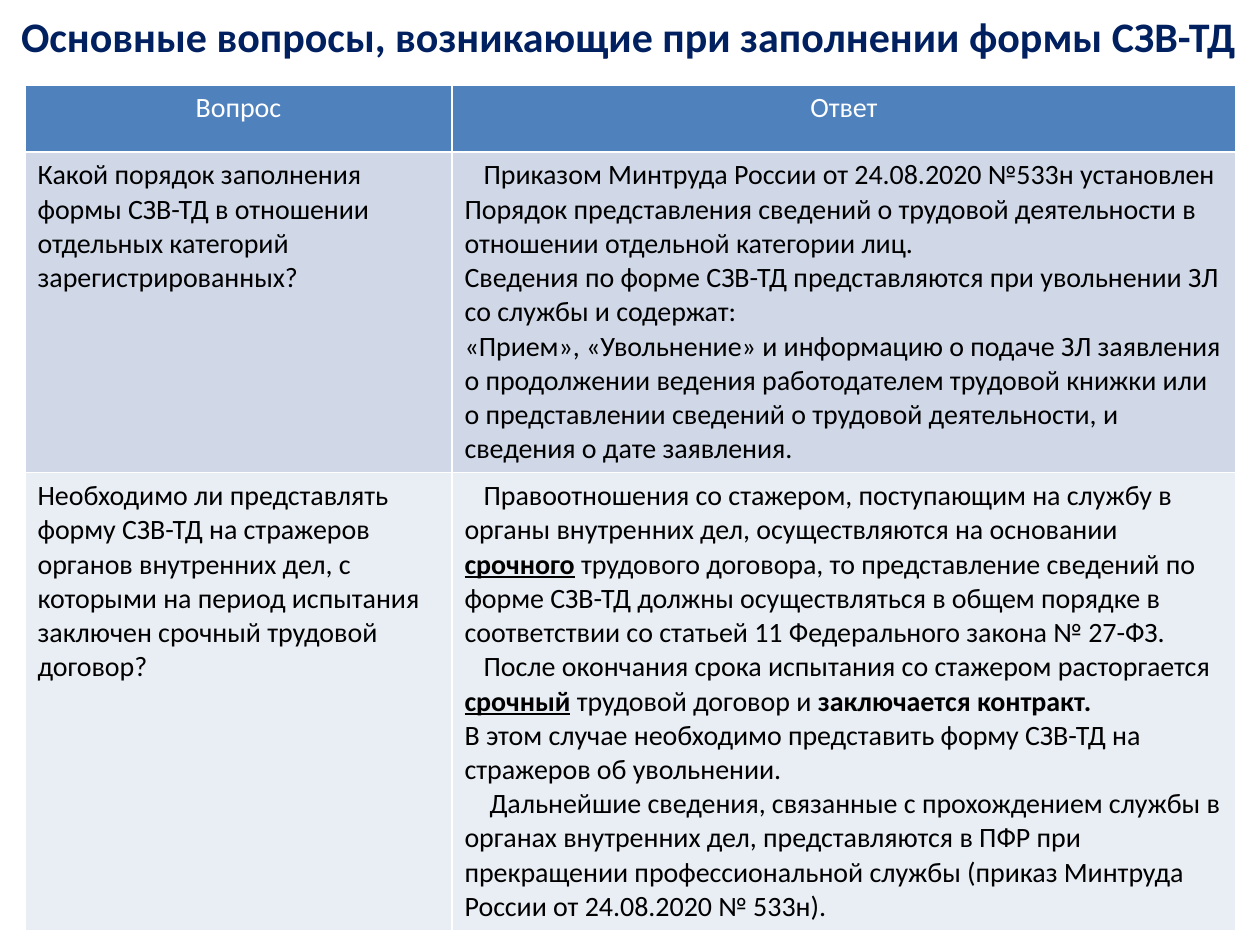
from pptx import Presentation
from pptx.dml.color import RGBColor
from pptx.enum.text import PP_ALIGN
from pptx.util import Emu, Pt

PX = 7257.14
NAVY = RGBColor(0x00, 0x20, 0x60)
BLUE = RGBColor(0x4F, 0x81, 0xBD)
PALE_BLUE = RGBColor(0xD0, 0xD8, 0xE8)
PALEST_BLUE = RGBColor(0xE9, 0xED, 0xF4)
WHITE = RGBColor(0xFF, 0xFF, 0xFF)
BLACK = RGBColor(0x00, 0x00, 0x00)

PLAIN, BOLD, KEY = (False, False), (True, False), (True, True)
INDENT, DEEP_INDENT = 19, 25

TITLE = "Основные вопросы, возникающие при заполнении формы СЗВ-ТД"
TITLE_BOX = (6, 6, 1245, 69)
TABLE_ORIGIN = (25, 85)
COLUMN_WIDTHS = [427, 784]
ROW_HEIGHTS = [67, 320, 457]
ROW_STYLES = [
    (BLUE, WHITE, PP_ALIGN.CENTER),
    (PALE_BLUE, BLACK, PP_ALIGN.LEFT),
    (PALEST_BLUE, BLACK, PP_ALIGN.LEFT),
]

ROWS = [
    [[(0, [("Вопрос", PLAIN)])], [(0, [("Ответ", PLAIN)])]],
    [
        [(0, [("Какой порядок заполнения формы СЗВ-ТД в отношении отдельных "
               "категорий зарегистрированных?", PLAIN)])],
        [
            (INDENT, [("Приказом Минтруда России от 24.08.2020 №533н установлен "
                       "Порядок представления сведений о трудовой деятельности в "
                       "отношении отдельной категории лиц.", PLAIN)]),
            (0, [("Сведения по форме СЗВ-ТД представляются при увольнении ЗЛ "
                  "со службы и содержат:", PLAIN)]),
            (0, [("«Прием», «Увольнение» и информацию о подаче ЗЛ заявления "
                  "о продолжении ведения работодателем трудовой книжки или "
                  "о представлении сведений о трудовой деятельности, и "
                  "сведения о дате заявления.", PLAIN)]),
        ],
    ],
    [
        [(0, [("Необходимо ли представлять форму СЗВ-ТД на стражеров органов "
               "внутренних дел, с которыми на период испытания заключен "
               "срочный трудовой договор?", PLAIN)])],
        [
            (INDENT, [
                ("Правоотношения со стажером, поступающим на службу в "
                 "органы внутренних дел, осуществляются на основании ", PLAIN),
                ("срочного", KEY),
                (" трудового договора, то представление сведений по форме СЗВ-ТД "
                 "должны осуществляться в общем порядке в соответствии со "
                 "статьей 11 Федерального закона № 27-ФЗ.", PLAIN),
            ]),
            (INDENT, [
                ("После окончания срока испытания со стажером расторгается ", PLAIN),
                ("срочный", KEY),
                (" трудовой договор и ", PLAIN),
                ("заключается контракт.", BOLD),
            ]),
            (0, [("В этом случае необходимо представить форму СЗВ-ТД на "
                  "стражеров об увольнении.", PLAIN)]),
            (DEEP_INDENT, [("Дальнейшие сведения, связанные с прохождением службы в "
                            "органах внутренних дел, представляются в ПФР при "
                            "прекращении профессиональной службы (приказ Минтруда "
                            "России от 24.08.2020 № 533н).", PLAIN)]),
        ],
    ],
]


def px(value):
    return Emu(round(value * PX))


def fill_cell(cell, paragraphs, size, color, alignment):
    text_frame = cell.text_frame
    for index, (indent, runs) in enumerate(paragraphs):
        paragraph = text_frame.add_paragraph() if index else text_frame.paragraphs[0]
        paragraph.alignment = alignment
        if indent:
            paragraph._p.get_or_add_pPr().set("indent", str(px(indent)))
        for text, (bold, underline) in runs:
            run = paragraph.add_run()
            run.text = text
            run.font.name = "Calibri"
            run.font.size = Pt(size)
            run.font.color.rgb = color
            run.font.bold = bold
            run.font.underline = underline


def add_questions(slide):
    box = (*TABLE_ORIGIN, sum(COLUMN_WIDTHS), sum(ROW_HEIGHTS))
    table = slide.shapes.add_table(len(ROWS), len(COLUMN_WIDTHS), *map(px, box)).table
    for column, width in zip(table.columns, COLUMN_WIDTHS):
        column.width = px(width)
    for row, height, style, contents in zip(table.rows, ROW_HEIGHTS, ROW_STYLES, ROWS):
        row.height = px(height)
        background, color, alignment = style
        for cell, paragraphs in zip(row.cells, contents):
            cell.fill.solid()
            cell.fill.fore_color.rgb = background
            fill_cell(cell, paragraphs, 16, color, alignment)


def add_title(slide):
    table = slide.shapes.add_table(1, 1, *map(px, TITLE_BOX)).table
    table.first_row = False
    table.horz_banding = False
    cell = table.cell(0, 0)
    cell.fill.background()
    fill_cell(cell, [(0, [(TITLE, BOLD)])], 24, NAVY, PP_ALIGN.CENTER)


def main():
    """Build the slide of questions and answers about the form."""
    presentation = Presentation()
    presentation.slide_width = px(1260)
    presentation.slide_height = px(945)
    slide = presentation.slides.add_slide(presentation.slide_layouts[6])
    add_questions(slide)
    add_title(slide)
    presentation.save("out.pptx")


if __name__ == "__main__":
    main()
